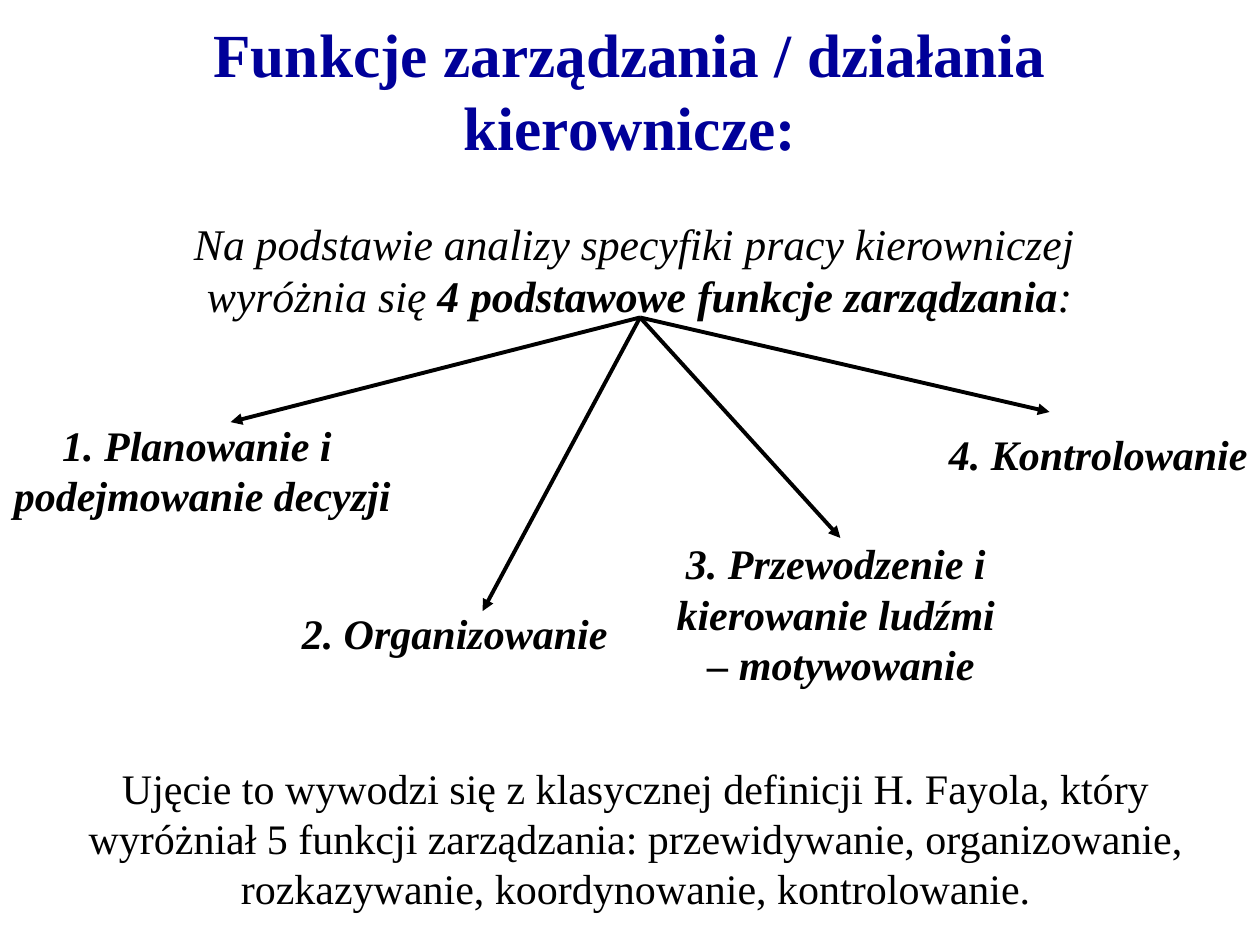
from lxml import etree
from pptx import Presentation
from pptx.dml.color import RGBColor
from pptx.enum import shapes, text
from pptx.oxml.ns import qn
from pptx.util import Inches, Pt

FONT = "Times New Roman"
BLACK, NAVY = "000000", "000099"
CENTER, RIGHT = text.PP_ALIGN.CENTER, text.PP_ALIGN.RIGHT
ARROW_ORIGIN = (5.08, 2.52)

# label lines, label box, alignment, arrow tip
FUNCTIONS = [
    (["1. Planowanie i ", "podejmowanie decyzji"],
     (0.01, 3.28, 3.19, 0.9), CENTER, (1.83, 3.35)),
    (["2. Organizowanie"],
     (2.29, 4.77, 2.63, 0.5), RIGHT, (3.83, 4.85)),
    (["3. Przewodzenie i ", "kierowanie ludźmi ", "– motywowanie"],
     (5.27, 4.22, 2.81, 1.3), CENTER, (6.67, 4.27)),
    (["4. Kontrolowanie"],
     (7.43, 3.35, 2.57, 0.5), RIGHT, (8.33, 3.27)),
]


def rgb(color):
    return RGBColor.from_string(color)


def add_run(paragraph, words, size, color=BLACK, bold=False, italic=False):
    run = paragraph.add_run()
    run.text = words
    font = run.font
    font.name, font.size = FONT, Pt(size)
    font.bold, font.italic = bold, italic
    font.color.rgb = rgb(color)


def add_text_frame(parent, box, wrap=False):
    frame = parent.add_textbox(*map(Inches, box)).text_frame
    frame.word_wrap = wrap
    frame.auto_size = text.MSO_AUTO_SIZE.SHAPE_TO_FIT_TEXT
    return frame


def set_title(slide):
    title = slide.shapes.title
    title.left, title.top, title.width, title.height = map(
        Inches, (0.75, 0.42, 8.5, 0.58))
    frame = title.text_frame
    frame.word_wrap = True
    frame.auto_size = text.MSO_AUTO_SIZE.NONE
    frame.vertical_anchor = text.MSO_ANCHOR.MIDDLE
    heading = frame.paragraphs[0]
    heading.alignment = CENTER
    add_run(heading, "Funkcje zarządzania / działania kierownicze:", 35,
            NAVY, bold=True)


def add_intro(slide):
    frame = add_text_frame(slide.shapes, (1.42, 1.67, 7.31, 0.93))
    basis, claim = frame.paragraphs[0], frame.add_paragraph()
    basis.alignment = claim.alignment = CENTER
    add_run(basis, "Na podstawie analizy specyfiki pracy kierowniczej ", 25,
            italic=True)
    for words, bold in [("wyróżnia się ", False),
                        ("4 podstawowe funkcje zarządzania", True),
                        (":", False)]:
        add_run(claim, words, 25, bold=bold, italic=True)


def add_label(parent, lines, box, alignment):
    label = add_text_frame(parent, box).paragraphs[0]
    label.alignment = alignment
    for index, line in enumerate(lines):
        if index:
            label.add_line_break()
        add_run(label, line, 24, bold=True, italic=True)


def add_arrow(parent, start, tip):
    arrow = parent.add_connector(shapes.MSO_CONNECTOR.STRAIGHT,
                                 *map(Inches, start + tip))
    arrow.line.color.rgb = rgb(BLACK)
    arrow.line.width = Pt(2.25)
    etree.SubElement(arrow.line._get_or_add_ln(), qn("a:tailEnd"),
                     type="triangle")
    etree.SubElement(arrow._element.spPr, qn("a:effectLst"))


def add_functions(slide):
    diagram = slide.shapes.add_group_shape().shapes
    for lines, box, alignment, _ in FUNCTIONS:
        add_label(diagram, lines, box, alignment)
    for *_, tip in FUNCTIONS:
        add_arrow(diagram, ARROW_ORIGIN, tip)


def add_closing(slide):
    frame = add_text_frame(slide.shapes, (0.42, 6, 9.25, 1.3), wrap=True)
    closing = frame.paragraphs[0]
    closing.alignment = CENTER
    add_run(closing,
            "Ujęcie to wywodzi się z klasycznej definicji H. Fayola, który "
            "wyróżniał 5 funkcji zarządzania: przewidywanie, organizowanie, "
            "rozkazywanie, koordynowanie, kontrolowanie.", 24)


def main():
    deck = Presentation()
    deck.slide_width, deck.slide_height = Inches(10), Inches(7.5)
    slide = deck.slides.add_slide(deck.slide_layouts[5])
    set_title(slide)
    add_intro(slide)
    add_functions(slide)
    add_closing(slide)
    deck.save("out.pptx")


if __name__ == "__main__":
    main()
